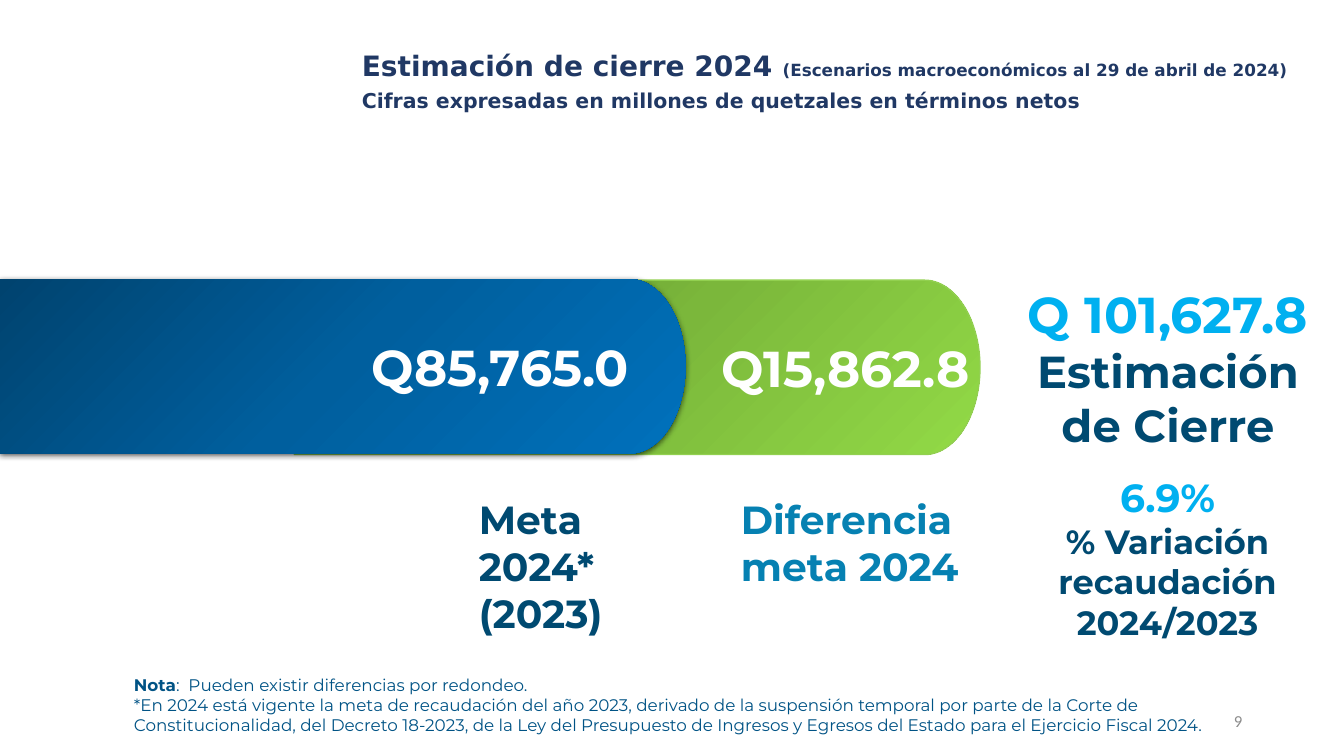
from dataclasses import dataclass
from math import cos, pi, sin

from lxml import etree
from pptx import Presentation
from pptx.dml.color import RGBColor
from pptx.enum.text import MSO_ANCHOR, PP_ALIGN
from pptx.oxml.ns import qn
from pptx.util import Inches, Pt

LEFT, CENTER, RIGHT = PP_ALIGN.LEFT, PP_ALIGN.CENTER, PP_ALIGN.RIGHT
TOP, MIDDLE = MSO_ANCHOR.TOP, MSO_ANCHOR.MIDDLE
BLANK_LAYOUT = 6


@dataclass(frozen=True)
class Theme:
    heading_font: str = "DejaVu Sans"
    body_font: str = "Montserrat"
    number_font: str = "Calibri"
    white: str = "FFFFFF"
    heading: str = "203864"
    dark_blue: str = "004A71"
    sky: str = "00B0F0"
    teal: str = "0681B2"
    note: str = "005385"
    gray: str = "8C8C8C"
    green_edge: str = "92D050"
    green_stops: tuple = ("57812A", "7BB73B", "92DA46")
    blue_stops: tuple = ("00436F", "005F9E", "0071BC")
    title_size: float = 20
    subtitle_size: float = 14.6
    amount_size: float = 36
    closing_size: float = 32
    label_size: float = 28
    variation_size: float = 24
    small_size: float = 12


THEME = Theme()


def add_text(paragraph, text, font=THEME.body_font, size=THEME.small_size,
             color=THEME.white, bold=True):
    """Add one formatted run to a paragraph."""
    run = paragraph.add_run()
    run.text = text
    run.font.name = font
    run.font.size = Pt(size)
    run.font.bold = bold
    run.font.color.rgb = RGBColor.from_string(color)


class SlideBuilder:
    def __init__(self, slide, theme):
        self.slide = slide
        self.theme = theme

    def fill_text(self, shape, paragraphs, align=LEFT, anchor=TOP, spacing=1.0,
                  insets=(0.1, 0.05, 0.1, 0.05)):
        """Fill a shape; each paragraph is a list of (text, format) runs."""
        frame = shape.text_frame
        frame.word_wrap = True
        frame.vertical_anchor = anchor
        (frame.margin_left, frame.margin_top,
         frame.margin_right, frame.margin_bottom) = map(Inches, insets)
        for index, runs in enumerate(paragraphs):
            paragraph = frame.add_paragraph() if index else frame.paragraphs[0]
            paragraph.alignment = align
            paragraph.line_spacing = spacing
            for text, style in runs:
                add_text(paragraph, text, **style)

    def text_box(self, box, paragraphs, fill=None, **layout):
        shape = self.slide.shapes.add_textbox(*map(Inches, box))
        if fill:
            color = RGBColor.from_string(fill)
            shape.fill.solid()
            shape.fill.fore_color.rgb = color
            shape.line.color.rgb = color
            shape.line.width = Pt(0.75)
        self.fill_text(shape, paragraphs, **layout)

    def rounded_bar(self, left, top, stops, amount, edge=None, shadow=False,
                    right_inset=0.1):
        """Draw a bar with an elliptical right end and a diagonal gradient."""
        width, height, cap, steps = 6.8, 1.73, 0.55, 48
        center_x, center_y = left + width - cap, top + height / 2
        angles = [pi * step / steps - pi / 2 for step in range(steps + 1)]
        outline = [(center_x + cap * cos(angle), center_y + height / 2 * sin(angle))
                   for angle in angles]
        outline.append((left, top + height))
        builder = self.slide.shapes.build_freeform(Inches(left), Inches(top))
        builder.add_line_segments([(Inches(x), Inches(y)) for x, y in outline])
        bar = builder.convert_to_shape()
        bar.shadow.inherit = False

        # Gradient fill
        bar.fill.gradient()
        bar.fill.gradient_angle = 315
        properties = bar.element.spPr
        stop_list = properties.find(qn("a:gradFill")).find(qn("a:gsLst"))
        for stop in list(stop_list):
            stop_list.remove(stop)
        for index, color in enumerate(stops):
            stop = etree.SubElement(stop_list, qn("a:gs"), pos=str(index * 50000))
            etree.SubElement(stop, qn("a:srgbClr"), val=color)

        # Edge and shadow
        if edge:
            bar.line.color.rgb = RGBColor.from_string(edge)
            bar.line.width = Pt(1)
        else:
            bar.line.fill.background()
        if shadow:
            outer = etree.SubElement(
                properties.find(qn("a:effectLst")), qn("a:outerShdw"),
                blurRad=str(Pt(4.5)), dist=str(Pt(1.5)), dir="5400000",
                algn="t", rotWithShape="0")
            black = etree.SubElement(outer, qn("a:srgbClr"), val="000000")
            etree.SubElement(black, qn("a:alpha"), val="63000")

        self.fill_text(bar, [[(amount, {"size": self.theme.amount_size})]], align=RIGHT,
                       anchor=MIDDLE, insets=(0.1, 0.05, right_inset, 0.05))


def main():
    presentation = Presentation()
    presentation.slide_width = Inches(13.33)
    presentation.slide_height = Inches(7.5)
    slide = presentation.slides.add_slide(presentation.slide_layouts[BLANK_LAYOUT])
    page = SlideBuilder(slide, THEME)

    # Heading
    heading = {"font": THEME.heading_font, "color": THEME.heading}
    heading_layout = {"fill": THEME.white, "anchor": MIDDLE, "spacing": 0.9}
    page.text_box((3.49, 0.33, 9.84, 0.67), [[
        ("Estimación de cierre 2024 ", {**heading, "size": THEME.title_size}),
        ("(Escenarios macroeconómicos al 29 de abril de 2024)", heading),
    ]], **heading_layout)
    page.text_box((3.49, 0.83, 9.84, 0.37), [[
        ("Cifras expresadas en millones de quetzales en términos netos",
         {**heading, "size": THEME.subtitle_size}),
    ]], **heading_layout)

    # Bars: the blue target overlaps the green difference
    page.rounded_bar(2.92, 2.78, THEME.green_stops, "Q15,862.8", edge=THEME.green_edge)
    page.rounded_bar(0, 2.77, THEME.blue_stops, "Q85,765.0", shadow=True,
                     right_inset=0.56)

    # Closing estimate and variation
    result_layout = {"align": CENTER, "insets": (0.07, 0.04, 0.07, 0.04)}
    variation = {"size": THEME.variation_size, "color": THEME.dark_blue}
    page.text_box((10.01, 2.77, 3.15, 1.73), [
        [("Q 101,627.8", {"size": THEME.amount_size, "color": THEME.sky})],
        [("Estimación de Cierre",
          {"size": THEME.closing_size, "color": THEME.dark_blue})],
    ], **result_layout)
    page.text_box((10.16, 4.66, 2.84, 1.45), [
        [("6.9%", {"size": THEME.label_size, "color": THEME.sky})],
        [("% Variación", variation)],
        [("recaudación", variation)],
        [("2024/2023", variation)],
    ], **result_layout)

    # Bar labels
    for box, label, color in (
        ((4.65, 4.86, 2.35, 1.51), "Meta 2024* (2023)", THEME.dark_blue),
        ((7.25, 4.86, 2.46, 1.04), "Diferencia meta 2024", THEME.teal),
    ):
        page.text_box(box, [[(label, {"size": THEME.label_size, "color": color})]])

    # Page number and note
    page.text_box((9.42, 6.95, 3, 0.4), [[
        ("9", {"font": THEME.number_font, "color": THEME.gray, "bold": False}),
    ]], align=RIGHT, anchor=MIDDLE)
    note = {"color": THEME.note, "bold": False}
    page.text_box((1.23, 6.64, 10.87, 0.71), [
        [("Nota", {**note, "bold": True}),
         (":  Pueden existir diferencias por redondeo.", note)],
        [("*En 2024 está vigente la meta de recaudación del año 2023, derivado de la "
          "suspensión temporal por parte de la Corte de Constitucionalidad, del Decreto "
          "18-2023, de la Ley del Presupuesto de Ingresos y Egresos del Estado para el "
          "Ejercicio Fiscal 2024.", note)],
    ])

    presentation.save("out.pptx")


if __name__ == "__main__":
    main()
